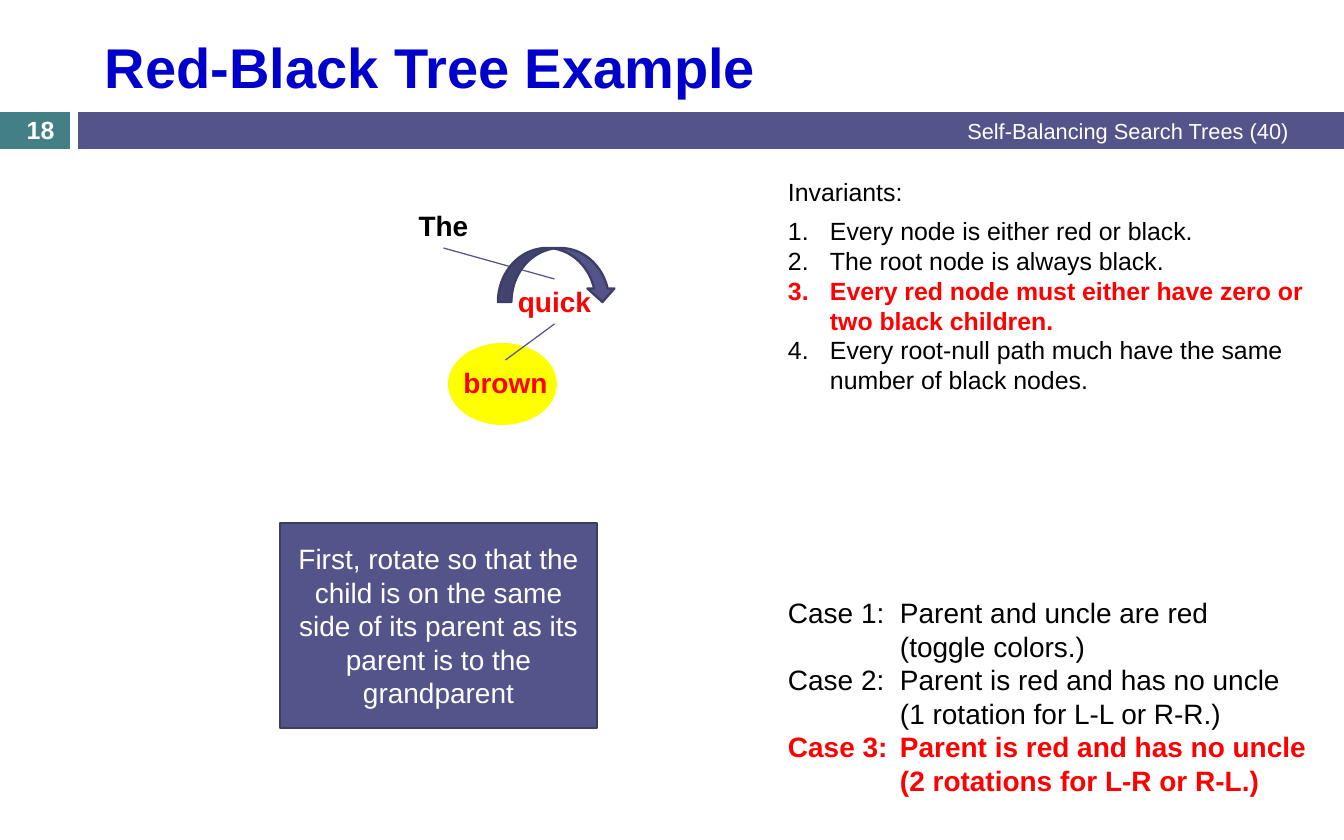
from lxml import etree
from pptx import Presentation
from pptx.dml.color import RGBColor
from pptx.enum.shapes import MSO_CONNECTOR, MSO_SHAPE
from pptx.enum.text import MSO_ANCHOR, MSO_AUTO_SIZE, PP_ALIGN
from pptx.oxml.ns import qn
from pptx.util import Emu, Pt

LEFT, CENTER, RIGHT = PP_ALIGN.LEFT, PP_ALIGN.CENTER, PP_ALIGN.RIGHT
TOP, MIDDLE = MSO_ANCHOR.TOP, MSO_ANCHOR.MIDDLE
RECTANGLE, OVAL = MSO_SHAPE.RECTANGLE, MSO_SHAPE.OVAL
CURVED_ARROW = MSO_SHAPE.CURVED_DOWN_ARROW
STRAIGHT = MSO_CONNECTOR.STRAIGHT
TOP_SIDE, BOTTOM_SIDE = 0, 2
PX_PER_INCH = 112
FONT = "Arial"
INDIGO, DARK_INDIGO, TEAL = "53548A", "3D3E66", "438086"
BLACK, WHITE, RED, YELLOW, BLUE = "000000", "FFFFFF", "FF0000", "FFFF00", "0000CC"

INVARIANTS = [
    ("Every node is either red or black.", False),
    ("The root node is always black.", False),
    ("Every red node must either have zero or two black children.", True),
    ("Every root-null path much have the same number of black nodes.", False),
]
CASES = [
    ("Case 1:\tParent and uncle are red", False),
    ("\t(toggle colors.)", False),
    ("Case 2:\tParent is red and has no uncle", False),
    ("\t(1 rotation for L-L or R-R.)", False),
    ("Case 3:\tParent is red and has no uncle", True),
    ("\t(2 rotations for L-R or R-L.)", True),
]


def px(length):
    return Emu(round(length * 914400 / PX_PER_INCH))


def color(hex_string):
    return RGBColor.from_string(hex_string)


def add_filled(slide, kind, box, fill, line=None):
    shape = slide.shapes.add_shape(kind, *map(px, box))
    shape.shadow.inherit = False
    shape.fill.solid()
    shape.fill.fore_color.rgb = color(fill)
    if line:
        shape.line.color.rgb = color(line)
        shape.line.width = Pt(1.5)
    else:
        shape.line.fill.background()
    return shape


def write(paragraph, text, size, text_color, bold=False, align=LEFT):
    paragraph.alignment = align
    run = paragraph.add_run()
    run.text = text
    font = {"name": FONT, "size": Pt(size), "bold": bold}
    for name, value in font.items():
        setattr(run.font, name, value)
    run.font.color.rgb = color(text_color)


def add_text_frame(slide, box, anchor=TOP, grow=False):
    shape = slide.shapes.add_textbox(*map(px, box))
    frame = shape.text_frame
    frame.word_wrap = True
    frame.vertical_anchor = anchor
    if grow:
        frame.auto_size = MSO_AUTO_SIZE.SHAPE_TO_FIT_TEXT
    return frame


def hang(paragraph, indent, numbered=False):
    """Give the paragraph a hanging indent, with an automatic number if wanted."""
    properties = paragraph._p.get_or_add_pPr()
    properties.set("marL", str(px(indent)))
    properties.set("indent", str(-px(indent)))
    if numbered:
        bullet = etree.SubElement(properties, qn("a:buFont"))
        bullet.set("typeface", "+mj-lt")
        number = etree.SubElement(properties, qn("a:buAutoNum"))
        number.set("type", "arabicPeriod")


def write_hanging(paragraph, text, size, highlighted, indent, numbered=False):
    hang(paragraph, indent, numbered)
    write(paragraph, text, size, RED if highlighted else BLACK, highlighted)


def add_header(slide, left, top, width, height):
    """Title with the page number and course bar along the bottom edge."""
    bar_top, bar_height, number_width, bar_left = top + 112, 37, 70, left + 78
    add_filled(slide, RECTANGLE, (left, bar_top, number_width, bar_height), TEAL)
    add_filled(slide, RECTANGLE,
               (bar_left, bar_top, width - 78, bar_height), INDIGO)

    course = add_text_frame(slide, (left + 504, bar_top - 1, 796, 39), MIDDLE)
    write(course.paragraphs[0], "Self-Balancing Search Trees (40)", 14, WHITE,
          align=RIGHT)
    number = add_text_frame(slide, (left, bar_top + 1, 81, 34), MIDDLE)
    write(number.paragraphs[0], "18", 16, WHITE, True, CENTER)
    title = add_text_frame(slide, (bar_left, top + 21, 1222, 90), MIDDLE)
    title.margin_left = px(27)
    write(title.paragraphs[0], "Red-Black Tree Example", 36, BLUE, True)


def add_node(slide, left, top, word, text_color):
    shape = slide.shapes.add_textbox(*map(px, (left, top, 159, 45)))
    frame = shape.text_frame
    frame.word_wrap = True
    frame.auto_size = MSO_AUTO_SIZE.SHAPE_TO_FIT_TEXT
    write(frame.paragraphs[0], word, 18, text_color, True, CENTER)
    return shape


def add_branch(slide, parent, child):
    connector = slide.shapes.add_connector(STRAIGHT, 0, 0, 0, 0)
    connector.begin_connect(parent, BOTTOM_SIDE)
    connector.end_connect(child, TOP_SIDE)
    connector.line.color.rgb = color(INDIGO)
    connector.line.width = Pt(0.79)
    etree.SubElement(connector._element.spPr, qn("a:effectLst"))


def add_tree(slide, left, top):
    add_filled(slide, OVAL, (left + 84, top + 140, 109, 82), YELLOW)
    root = add_node(slide, left, top, "The", BLACK)
    child = add_node(slide, left + 111, top + 76, "quick", RED)
    grandchild = add_node(slide, left + 62, top + 157, "brown", RED)
    add_branch(slide, root, child)
    add_branch(slide, child, grandchild)
    add_filled(slide, CURVED_ARROW, (left + 134, top + 45, 118, 54),
               INDIGO, DARK_INDIGO)


def add_step_note(slide, box):
    note = add_filled(slide, RECTANGLE, box, INDIGO, DARK_INDIGO).text_frame
    note.word_wrap = True
    note.vertical_anchor = MIDDLE
    write(note.paragraphs[0],
          "First, rotate so that the child is on the same side of its parent "
          "as its parent is to the grandparent", 18, WHITE, align=CENTER)


def add_invariants(slide, box):
    frame = add_text_frame(slide, box, grow=True)
    write(frame.paragraphs[0], "Invariants:", 16, BLACK)
    for index, (text, highlighted) in enumerate(INVARIANTS):
        paragraph = frame.add_paragraph()
        paragraph.space_before = Pt(0 if index else 6)
        write_hanging(paragraph, text, 16, highlighted, 42, numbered=True)


def add_cases(slide, box):
    frame = add_text_frame(slide, box, grow=True)
    for index, (text, highlighted) in enumerate(CASES):
        paragraph = frame.add_paragraph() if index else frame.paragraphs[0]
        write_hanging(paragraph, text, 18, highlighted, 112)


def main():
    presentation = Presentation()
    presentation.slide_width, presentation.slide_height = px(1344), px(840)
    slide = presentation.slides.add_slide(presentation.slide_layouts[6])
    add_header(slide, 0, 0, 1344, 149)
    add_tree(slide, 364, 203)
    add_step_note(slide, (280, 523, 317, 205))
    add_invariants(slide, (777, 171, 554, 232))
    add_cases(slide, (777, 590, 554, 215))
    presentation.save("out.pptx")


if __name__ == "__main__":
    main()
